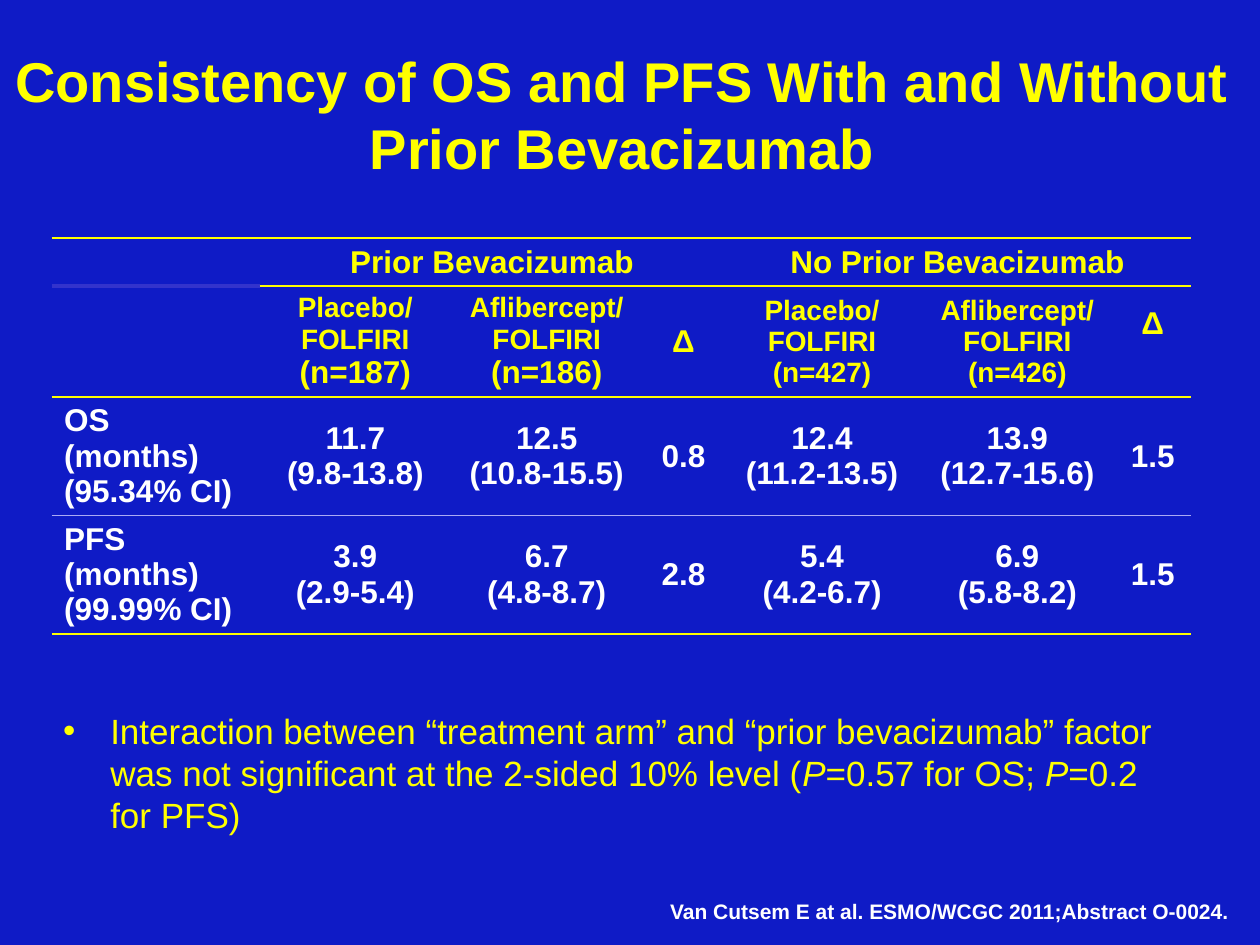
"""Build the slide on survival with and without prior bevacizumab."""
from dataclasses import dataclass

from lxml import etree
from pptx import Presentation
from pptx import util as u
from pptx.dml.color import RGBColor
from pptx.enum import text
from pptx.oxml.ns import qn

COLORS = {"ground": "0F1BC6", "accent": "FFFF00", "plain": "FFFFFF",
          "stub": "3333CC", "divider": "ABAAF5"}
SLIDE_W, SLIDE_H = u.Inches(10), u.Inches(7.5)
COLUMNS = (1.65, 1.52, 1.52, 0.65, 1.55, 1.55, 0.6)
ROWS = (0.38, 0.88, 0.94, 0.94)
RULES = ("accent", "accent", "accent", "divider", "accent")


@dataclass
class Entry:
    """Lines of one table cell, with the size of the last line and a lift."""
    lines: tuple[str, ...] = ()
    size: float = 18
    last_size: float = 18
    lift: float = 0


@dataclass
class Place:
    """Position and extent as shares of the slide."""
    left: float
    top: float
    width: float
    height: float

    def apply(self, shape) -> None:
        shape.left, shape.top = int(self.left * SLIDE_W), int(self.top * SLIDE_H)
        shape.width, shape.height = int(self.width * SLIDE_W), int(self.height * SLIDE_H)


def arm(drug: str, count: int, last_size: float = 16) -> Entry:
    return Entry((drug + "/", "FOLFIRI", f"(n={count})"), 16, last_size)


def outcome(label: str, *values: str) -> list[Entry]:
    return [Entry((label,))] + [Entry(tuple(value.split(" "))) for value in values]


ENTRIES = [
    [Entry(), Entry(("Prior Bevacizumab",)), Entry(), Entry(),
     Entry(("No Prior Bevacizumab",)), Entry(), Entry()],
    [Entry(), arm("Placebo", 187, 18), arm("Aflibercept", 186, 18), Entry(("Δ",)),
     arm("Placebo", 427), arm("Aflibercept", 426), Entry(("Δ",), lift=0.28)],
    outcome("OS (months) (95.34% CI)", "11.7 (9.8-13.8)", "12.5 (10.8-15.5)", "0.8",
            "12.4 (11.2-13.5)", "13.9 (12.7-15.6)", "1.5"),
    outcome("PFS (months) (99.99% CI)", "3.9 (2.9-5.4)", "6.7 (4.8-8.7)", "2.8",
            "5.4 (4.2-6.7)", "6.9 (5.8-8.2)", "1.5"),
]


def style(font, size: float, color: str, bold: bool = False) -> None:
    font.name, font.size, font.bold = "Arial", u.Pt(size), bold
    font.color.rgb = RGBColor.from_string(COLORS[color])


def add_border(cell, side: str, color: str | None, width: float = 1) -> None:
    line = etree.SubElement(cell._tc.get_or_add_tcPr(), qn("a:ln" + side))
    if color is None:
        etree.SubElement(line, qn("a:noFill"))
        return
    line.set("w", str(u.Pt(width)))
    fill = etree.SubElement(line, qn("a:solidFill"))
    etree.SubElement(fill, qn("a:srgbClr"), val=COLORS[color])


def rule_at(line: int, column: int) -> tuple[str, float]:
    return ("stub", 2.25) if (line, column) == (1, 0) else (RULES[line], 1)


def fill_cell(cell, entry: Entry, row: int, column: int) -> None:
    is_header = row < 2
    add_border(cell, "L", None)
    add_border(cell, "R", None)
    add_border(cell, "T", *rule_at(row, column))
    add_border(cell, "B", *rule_at(row + 1, column))
    if is_header:
        cell.fill.solid()
        cell.fill.fore_color.rgb = RGBColor.from_string(COLORS["ground"])
    else:
        cell.fill.background()
    cell.vertical_anchor = text.MSO_ANCHOR.MIDDLE
    cell.margin_bottom = u.Inches(0.05 + entry.lift)
    cell.text_frame.text = "\n".join(entry.lines)
    for paragraph in cell.text_frame.paragraphs:
        style(paragraph.font, entry.size, "accent" if is_header else "plain", True)
        paragraph.alignment = text.PP_ALIGN.CENTER if column else text.PP_ALIGN.LEFT
    paragraph.font.size = u.Pt(entry.last_size)


def add_survival_table(slide) -> None:
    frame = slide.shapes.add_table(len(ROWS), len(COLUMNS), u.Inches(0.41), u.Inches(1.89),
                                   u.Inches(sum(COLUMNS)), u.Inches(sum(ROWS)))
    survival = frame.table
    survival.first_row = survival.horz_banding = False
    for column, width in zip(survival.columns, COLUMNS):
        column.width = u.Inches(width)
    for row, height in zip(survival.rows, ROWS):
        row.height = u.Inches(height)
    for row, entries in enumerate(ENTRIES):
        for column, entry in enumerate(entries):
            fill_cell(survival.cell(row, column), entry, row, column)
    for first in (1, 4):
        survival.cell(0, first).merge(survival.cell(0, first + 2))


def add_title(slide) -> None:
    title = slide.shapes.title
    Place(0, 0.07, 1, 0.1).apply(title)
    title.text_frame.auto_size = text.MSO_AUTO_SIZE.NONE
    title.text_frame.text = "Consistency of OS and PFS With and Without \vPrior Bevacizumab "
    style(title.text_frame.paragraphs[0].font, 32, "accent", True)


def add_interaction(slide) -> None:
    interaction = slide.placeholders[1]
    Place(0.04, 0.744, 0.904, 0.185).apply(interaction)
    interaction.text_frame.auto_size = text.MSO_AUTO_SIZE.NONE
    finding = interaction.text_frame.paragraphs[0]
    style(finding.font, 20, "accent")
    parts = ("Interaction between “treatment arm” and “prior bevacizumab” factor was not "
             "significant at the 2-sided 10% level (", "P", "=0.57 for OS; ", "P", "=0.2 for PFS)")
    for part in parts:
        run = finding.add_run()
        run.text = part
        run.font.italic = part == "P"


def add_citation(slide) -> None:
    citation = slide.shapes.add_textbox(0, 0, 0, 0)
    Place(0.522, 0.944, 0.47, 0.04).apply(citation)
    citation.text_frame.word_wrap = False
    citation.text_frame.auto_size = text.MSO_AUTO_SIZE.SHAPE_TO_FIT_TEXT
    citation.text_frame.text = "Van Cutsem E at al. ESMO/WCGC 2011;Abstract O-0024."
    style(citation.text_frame.paragraphs[0].font, 12, "plain", True)


def main() -> None:
    deck = Presentation()
    deck.slide_width, deck.slide_height = SLIDE_W, SLIDE_H
    slide = deck.slides.add_slide(deck.slide_layouts[1])
    slide.background.fill.solid()
    slide.background.fill.fore_color.rgb = RGBColor.from_string(COLORS["ground"])
    add_title(slide)
    add_survival_table(slide)
    add_interaction(slide)
    add_citation(slide)
    deck.save("out.pptx")


if __name__ == "__main__":
    main()
